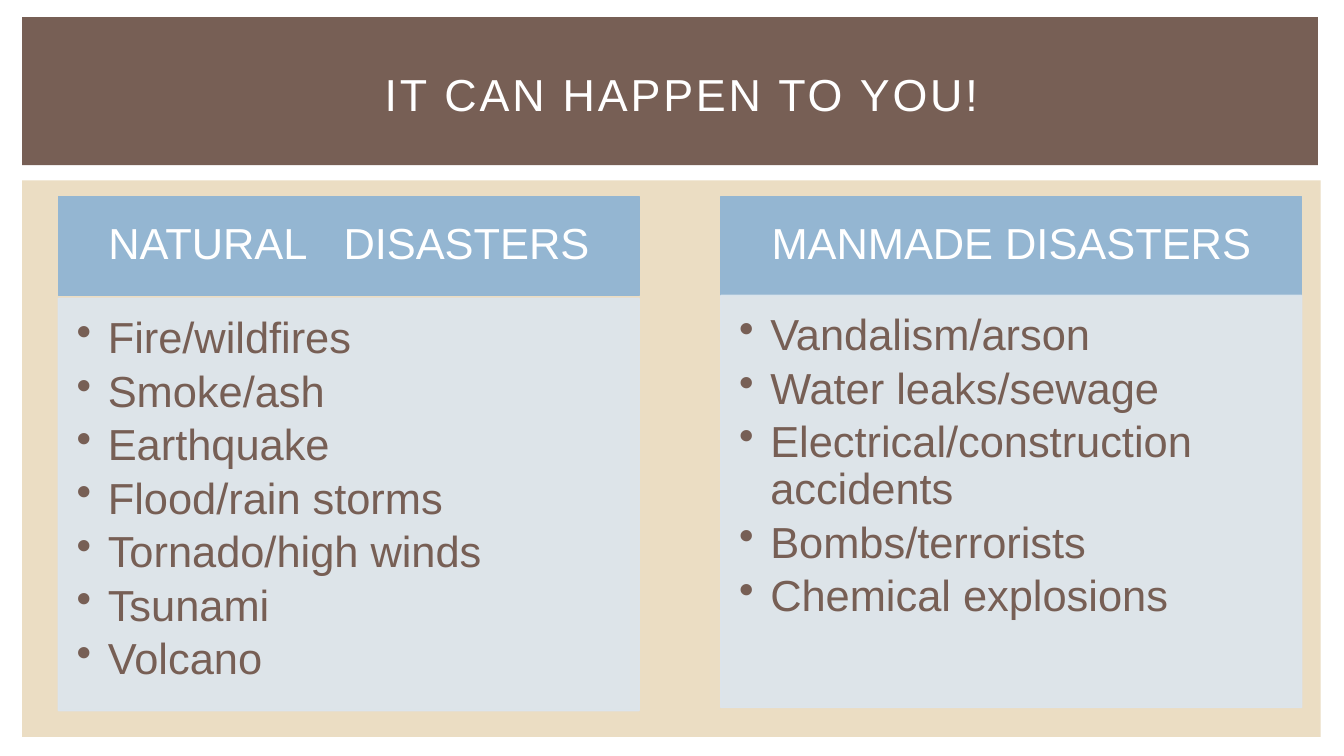
from dataclasses import dataclass

from lxml import etree
from pptx import Presentation
from pptx import util as u
from pptx.dml.color import RGBColor
from pptx.enum import shapes, text
from pptx.oxml.ns import qn


@dataclass(frozen=True)
class Theme:
    font: str = "Arial"
    title_size: int = 32
    body_size: int = 31
    brown: str = "775F55"
    sand: str = "EBDDC3"
    blue: str = "94B6D2"
    pale: str = "DCE5EE"
    white: str = "FFFFFF"


def write(paragraph, words, *, theme, size, color, spacing=0):
    """Add one formatted run; spacing is extra points after each letter."""
    run = paragraph.add_run()
    run.text = words
    run.font.name = theme.font
    run.font.size = u.Pt(size)
    run.font.color.rgb = RGBColor.from_string(color)
    if spacing:
        run.font._element.set("spc", str(round(spacing * 100)))


class DisasterSlide:
    """Places elements by percentages of the slide's width and height."""

    def __init__(self, presentation, theme):
        self.presentation = presentation
        self.theme = theme
        self.slide = presentation.slides.add_slide(presentation.slide_layouts[6])

    def place(self, left, top, width, height):
        across = self.presentation.slide_width / 100
        down = self.presentation.slide_height / 100
        return [round(n) for n in (left * across, top * down, width * across, height * down)]

    def panel(self, box, color, outlined=False, opacity=100):
        shape = self.slide.shapes.add_shape(shapes.MSO_SHAPE.RECTANGLE, *self.place(*box))
        shape.shadow.inherit = False
        shape.fill.solid()
        shape.fill.fore_color.rgb = RGBColor.from_string(color)
        if outlined:
            shape.line.color.rgb = RGBColor.from_string(color)
            shape.line.width = u.Pt(1)
        else:
            shape.line.fill.background()
        if opacity < 100:
            for tone in shape._element.spPr.iter(qn("a:srgbClr")):
                etree.SubElement(tone, qn("a:alpha")).set("val", str(opacity * 1000))
        return shape

    def frame(self, shape, insets, anchor):
        frame = shape.text_frame
        frame.word_wrap = True
        frame.vertical_anchor = anchor
        (frame.margin_left, frame.margin_top,
         frame.margin_right, frame.margin_bottom) = map(u.Inches, insets)
        return frame

    def title(self, box, words):
        shape = self.slide.shapes.add_textbox(*self.place(*box))
        frame = self.frame(shape, (0.1, 0.05, 0.1, 0.05), text.MSO_ANCHOR.MIDDLE)
        paragraph = frame.paragraphs[0]
        paragraph.alignment = text.PP_ALIGN.CENTER
        write(paragraph, words, theme=self.theme, size=self.theme.title_size,
              color=self.theme.white, spacing=2)

    def heading(self, box, first, second, gap):
        shape = self.panel(box, self.theme.blue, outlined=True)
        frame = self.frame(shape, (0.24, 0.14, 0.24, 0.14), text.MSO_ANCHOR.MIDDLE)
        paragraph = frame.paragraphs[0]
        paragraph.alignment = text.PP_ALIGN.CENTER
        paragraph.line_spacing = 0.9
        for words, spacing in ((first, 0), (" ", gap), (second, 0)):
            write(paragraph, words, theme=self.theme, size=self.theme.body_size,
                  color=self.theme.white, spacing=spacing)

    def bullets(self, box, items):
        shape = self.panel(box, self.theme.pale, outlined=True, opacity=90)
        frame = self.frame(shape, (0.18, 0.18, 0.24, 0.27), text.MSO_ANCHOR.TOP)
        indent = u.Inches(0.31)
        for index, item in enumerate(items):
            paragraph = frame.add_paragraph() if index else frame.paragraphs[0]
            paragraph.alignment = text.PP_ALIGN.LEFT
            paragraph.line_spacing = 0.9
            paragraph.space_after = u.Pt(0.15 * self.theme.body_size)
            properties = paragraph._p.get_or_add_pPr()
            properties.set("marL", str(indent))
            properties.set("indent", str(-indent))
            etree.SubElement(properties, qn("a:buChar")).set("char", "•")
            write(paragraph, item, theme=self.theme, size=self.theme.body_size,
                  color=self.theme.brown)


def main():
    presentation = Presentation()
    presentation.slide_width = u.Inches(13.33)
    presentation.slide_height = u.Inches(7.5)
    theme = Theme()
    page = DisasterSlide(presentation, theme)

    # Backdrop and title band
    page.panel((1.65, 23.87, 96.62, 73.6), theme.sand)
    page.panel((1.65, 2.27, 96.4, 19.6), theme.brown)
    page.title((4.88, 4.67, 91.67, 15.33), "IT CAN HAPPEN TO YOU!")

    # Two columns: left edge, heading words, extra gap in points, list top, items
    columns = [
        (4.35, "NATURAL", "DISASTERS", 17.2, 39.47,
         ["Fire/wildfires", "Smoke/ash", "Earthquake", "Flood/rain storms",
          "Tornado/high winds", "Tsunami", "Volcano"]),
        (53.64, "MANMADE", "DISASTERS", 0, 39.07,
         ["Vandalism/arson", "Water leaks/sewage", "Electrical/construction accidents",
          "Bombs/terrorists", "Chemical explosions"]),
    ]
    column_width = 43.21
    for left, first, second, gap, list_top, items in columns:
        page.heading((left, 26, column_width, 13.07), first, second, gap)
        page.bullets((left, list_top, column_width, 54.53), items)

    presentation.save("out.pptx")


if __name__ == "__main__":
    main()
